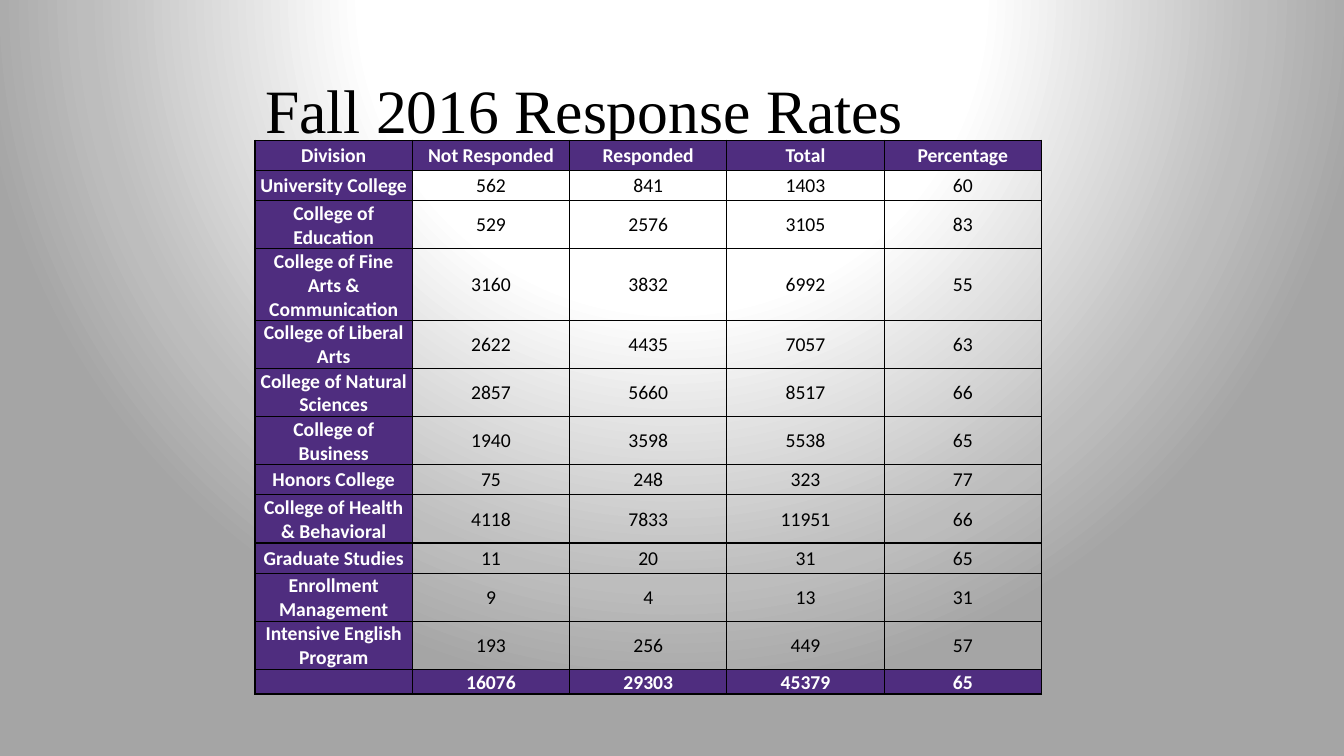
from lxml.etree import SubElement
from pptx import Presentation
from pptx.dml.color import RGBColor
from pptx.enum.text import MSO_ANCHOR, PP_ALIGN
from pptx.oxml import parse_xml
from pptx.oxml.ns import nsdecls, qn
from pptx.util import Inches, Pt

TITLE = "Fall 2016 Response Rates"
HEADER = ("Division", "Not Responded", "Responded", "Total", "Percentage")
DIVISIONS = [
    ("University College", 562, 841, 1403, 60, 1),
    ("College of Education", 529, 2576, 3105, 83, 2),
    ("College of Fine Arts & Communication", 3160, 3832, 6992, 55, 3),
    ("College of Liberal Arts", 2622, 4435, 7057, 63, 2),
    ("College of Natural Sciences", 2857, 5660, 8517, 66, 2),
    ("College of Business", 1940, 3598, 5538, 65, 2),
    ("Honors College", 75, 248, 323, 77, 1),
    ("College of Health & Behavioral", 4118, 7833, 11951, 66, 2),
    ("Graduate Studies", 11, 20, 31, 65, 1),
    ("Enrollment Management", 9, 4, 13, 31, 2),
    ("Intensive English Program", 193, 256, 449, 57, 2),
]
TOTALS = ("", 16076, 29303, 45379, 65)
HEIGHT_BY_LINES = {1: 0.3, 2: 0.46, 3: 0.68}
TOTALS_HEIGHT = 0.23
LEFT, TABLE_TOP, COLUMN_WIDTH = 2.53, 1.39, 1.56
PURPLE, BLACK, WHITE = "4F2D7F", "000000", "FFFFFF"
GRADIENT = [(0, WHITE), (40, WHITE), (76, "BDBDBD"), (91, "A5A5A5")]
NO_STYLE = "{2D5ABB26-0587-4C30-8999-92F81FD0307C}"


def color(value):
    return RGBColor.from_string(value)


def paint_background(page):
    stops = "".join(
        f'<a:gs pos="{share * 1000}"><a:srgbClr val="{tone}"/></a:gs>'
        for share, tone in GRADIENT
    )
    page.element.cSld.insert(0, parse_xml(
        f'<p:bg {nsdecls("p", "a")}><p:bgPr><a:gradFill rotWithShape="1">'
        f'<a:gsLst>{stops}</a:gsLst><a:path path="circle">'
        '<a:fillToRect l="50000" t="-80000" r="50000" b="180000"/></a:path>'
        '</a:gradFill><a:effectLst/></p:bgPr></p:bg>'
    ))


def add_title(page):
    box = page.shapes.add_textbox(Inches(LEFT), Inches(0.4), Inches(9.88), Inches(1.45))
    frame = box.text_frame
    frame.word_wrap = True
    frame.vertical_anchor = MSO_ANCHOR.MIDDLE
    frame.text = TITLE
    para = frame.paragraphs[0]
    para.line_spacing = 0.9
    font = para.runs[0].font
    font.name, font.size = "Times New Roman", Pt(44)
    font.color.rgb = color(BLACK)


def add_borders(cell):
    properties = cell._tc.get_or_add_tcPr()
    for side in ("a:lnL", "a:lnR", "a:lnT", "a:lnB"):
        line = SubElement(properties, qn(side), w=str(Pt(1)))
        fill = SubElement(line, qn("a:solidFill"))
        SubElement(fill, qn("a:srgbClr"), val=BLACK)


def write_cell(cell, value, strong):
    add_borders(cell)
    cell.margin_left = cell.margin_right = cell.margin_top = Inches(0.01)
    cell.margin_bottom = 0
    cell.vertical_anchor = MSO_ANCHOR.MIDDLE
    if strong:
        cell.fill.solid()
        cell.fill.fore_color.rgb = color(PURPLE)
    else:
        cell.fill.background()
    cell.text_frame.text = str(value)
    para = cell.text_frame.paragraphs[0]
    para.alignment = PP_ALIGN.CENTER
    for span in para.runs:
        span.font.name, span.font.size, span.font.bold = "Calibri", Pt(14), strong
        span.font.color.rgb = color(WHITE if strong else BLACK)
    if not para.runs:
        SubElement(para._p, qn("a:endParaRPr"), sz="1400")


def add_response_table(page):
    rows = [HEADER] + [division[:-1] for division in DIVISIONS] + [TOTALS]
    heights = [HEIGHT_BY_LINES[1]]
    heights += [HEIGHT_BY_LINES[division[-1]] for division in DIVISIONS]
    heights.append(TOTALS_HEIGHT)
    frame = page.shapes.add_table(
        len(rows), len(HEADER), Inches(LEFT), Inches(TABLE_TOP),
        Inches(COLUMN_WIDTH * len(HEADER)), Inches(sum(heights)),
    )
    table = frame.table
    table.horz_banding = False
    table._tbl.tblPr.find(qn("a:tableStyleId")).text = NO_STYLE
    for column in table.columns:
        column.width = Inches(COLUMN_WIDTH)
    for row_index, (values, height) in enumerate(zip(rows, heights)):
        table.rows[row_index].height = Inches(height)
        edge_row = row_index in (0, len(rows) - 1)
        for column_index, value in enumerate(values):
            write_cell(table.cell(row_index, column_index), value, edge_row or column_index == 0)


def main():
    deck = Presentation()
    deck.slide_width, deck.slide_height = Inches(13.33), Inches(7.5)
    page = deck.slides.add_slide(deck.slide_layouts[6])
    paint_background(page)
    add_title(page)
    add_response_table(page)
    deck.save("out.pptx")


if __name__ == "__main__":
    main()
